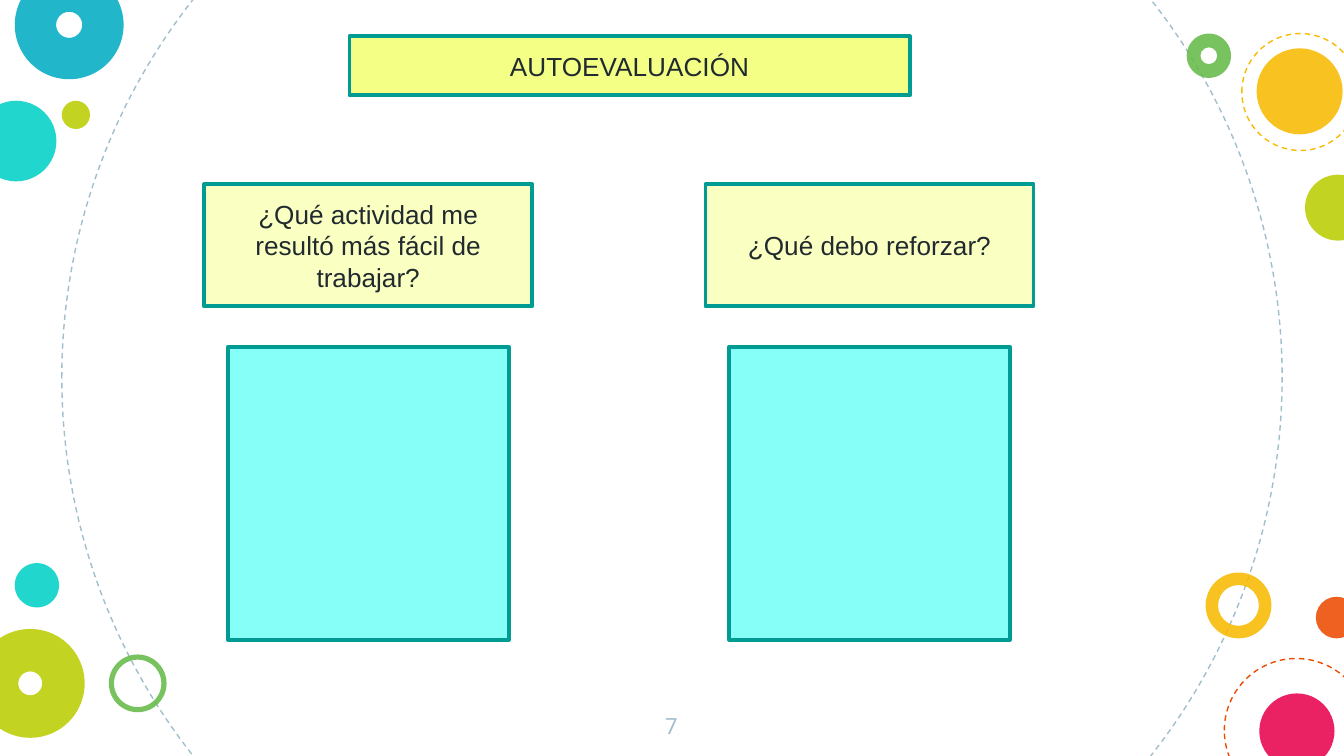
from collections import namedtuple
from dataclasses import dataclass

from lxml import etree
from pptx import Presentation
from pptx.dml.color import RGBColor
from pptx.enum.dml import MSO_LINE
from pptx.enum.shapes import MSO_SHAPE
from pptx.enum.text import MSO_ANCHOR, PP_ALIGN
from pptx.oxml.ns import qn
from pptx.util import Inches, Pt

Box = namedtuple("Box", "left top width height")


@dataclass(frozen=True)
class Theme:
    turquoise: str = "00D1C6"
    blue: str = "00ACC3"
    lime: str = "BBCD00"
    green: str = "65BB48"
    amber: str = "F8BB00"
    orange: str = "ED4A00"
    pink: str = "E8004C"
    gray: str = "A1BECC"
    ink: str = "212A2E"
    border: str = "009B92"
    title_fill: str = "F4FF85"
    question_fill: str = "FAFFC2"
    answer_fill: str = "87FFF9"
    body_font: str = "Arial"
    number_font: str = "Roboto"
    body_size: int = 14
    number_size: int = 12
    border_width: float = 2
    dash_width: float = 0.75
    circle_opacity: int = 87


THEME = Theme()

# Each circle: left and top within its corner, diameter, colour, and
# optionally the ring thickness as a share of the diameter.
CORNERS = [
    (Box(-0.18, -0.22, 1.1, 1.57), [
        (0, 0.97, 0.6, THEME.turquoise, None),
        (0.29, 0, 0.81, THEME.blue, 0.38),
        (0.64, 0.97, 0.21, THEME.lime, None),
    ], None),
    (Box(-0.18, 4.19, 1.42, 1.3), [
        (0.99, 0.68, 0.43, THEME.green, 0.09),
        (0, 0.49, 0.81, THEME.lime, 0.39),
        (0.29, 0, 0.33, THEME.turquoise, None),
    ], None),
    (Box(8.83, 0.25, 1.37, 1.54), [
        (0, 0, 0.33, THEME.green, 0.31),
        (0.52, 0.11, 0.64, THEME.amber, None),
        (0.88, 1.05, 0.49, THEME.lime, None),
    ], (0.41, 0, 0.87, THEME.amber)),
    (Box(8.97, 4.26, 1.21, 1.71), [
        (0, 0, 0.49, THEME.amber, 0.19),
        (0.82, 0.18, 0.31, THEME.orange, None),
        (0.4, 0.9, 0.56, THEME.pink, None),
    ], (0.14, 0.64, 1.07, THEME.orange)),
]


def lengths(box):
    return [Inches(value) for value in box]


def add_plain_shape(slide, kind, box, fill=None):
    """Add a shape without shadow or outline, filled only if a colour is given."""
    shape = slide.shapes.add_shape(kind, *lengths(box))
    shape.shadow.inherit = False
    shape.line.fill.background()
    if fill:
        shape.fill.solid()
        shape.fill.fore_color.rgb = RGBColor.from_string(fill)
    else:
        shape.fill.background()
    return shape


def outline(shape, color, width):
    shape.line.color.rgb = RGBColor.from_string(color)
    shape.line.width = Pt(width)


def write_text(shape, text, font_name, size, color):
    paragraph = shape.text_frame.paragraphs[0]
    paragraph.alignment = PP_ALIGN.CENTER
    run = paragraph.add_run()
    run.text = text
    for name, value in {"name": font_name, "size": Pt(size)}.items():
        setattr(run.font, name, value)
    run.font.color.rgb = RGBColor.from_string(color)


def add_dashed_circle(slide, box, color):
    circle = add_plain_shape(slide, MSO_SHAPE.OVAL, box)
    outline(circle, color, THEME.dash_width)
    circle.line.dash_style = MSO_LINE.DASH


def add_translucent_circle(slide, box, color, ring):
    kind = MSO_SHAPE.DONUT if ring else MSO_SHAPE.OVAL
    circle = add_plain_shape(slide, kind, box, color)
    if ring:
        circle.adjustments[0] = ring
    color_element = circle.element.spPr.find(qn("a:solidFill"))[0]
    alpha = etree.SubElement(color_element, qn("a:alpha"))
    alpha.set("val", str(THEME.circle_opacity * 1000))


def add_corner(slide, box, circles, dashed):
    for left, top, size, color, ring in circles:
        place = Box(box.left + left, box.top + top, size, size)
        add_translucent_circle(slide, place, color, ring)
    if dashed:
        left, top, size, color = dashed
        add_dashed_circle(slide, Box(box.left + left, box.top + top, size, size), color)


def add_panel(slide, box, fill, text=None):
    panel = add_plain_shape(slide, MSO_SHAPE.RECTANGLE, box, fill)
    outline(panel, THEME.border, THEME.border_width)
    etree.SubElement(panel.element.spPr.find(qn("a:ln")), qn("a:round"))
    if text:
        for name, value in {"word_wrap": True, "vertical_anchor": MSO_ANCHOR.MIDDLE}.items():
            setattr(panel.text_frame, name, value)
        write_text(panel, text, THEME.body_font, THEME.body_size, THEME.ink)


def add_question_column(slide, box, question):
    """Place a question with a narrower answer area centred beneath it."""
    question_height, gap, answer_width = 0.91, 0.3, 2.09
    answer_top = question_height + gap
    add_panel(slide, Box(box.left, box.top, box.width, question_height),
              THEME.question_fill, question)
    add_panel(slide, Box(box.left + (box.width - answer_width) / 2, box.top + answer_top,
                         answer_width, box.height - answer_top), THEME.answer_fill)


def add_page_number(slide, box, number):
    text_box = slide.shapes.add_textbox(*lengths(box))
    frame = text_box.text_frame
    frame.word_wrap = True
    for side in ("left", "top", "right", "bottom"):
        setattr(frame, f"margin_{side}", Inches(0.1))
    write_text(text_box, str(number), THEME.number_font, THEME.number_size, THEME.gray)


def build_self_assessment(presentation):
    slide = presentation.slides.add_slide(presentation.slide_layouts[6])
    add_dashed_circle(slide, Box(0.46, -1.73, 9.08, 9.08), THEME.gray)
    for box, circles, dashed in CORNERS:
        add_corner(slide, box, circles, dashed)
    add_page_number(slide, Box(4.74, 5.2, 0.51, 0.43), 7)
    add_panel(slide, Box(2.6, 0.27, 4.17, 0.44), THEME.title_fill, "AUTOEVALUACIÓN")
    questions = ["¿Qué actividad me resultó más fácil de trabajar?", "¿Qué debo reforzar?"]
    for index, question in enumerate(questions):
        add_question_column(slide, Box(1.52 + index * 3.73, 1.37, 2.44, 3.39), question)


def main():
    presentation = Presentation()
    presentation.slide_width = Inches(10)
    presentation.slide_height = presentation.slide_width * 9 // 16
    build_self_assessment(presentation)
    presentation.save("out.pptx")


if __name__ == "__main__":
    main()
